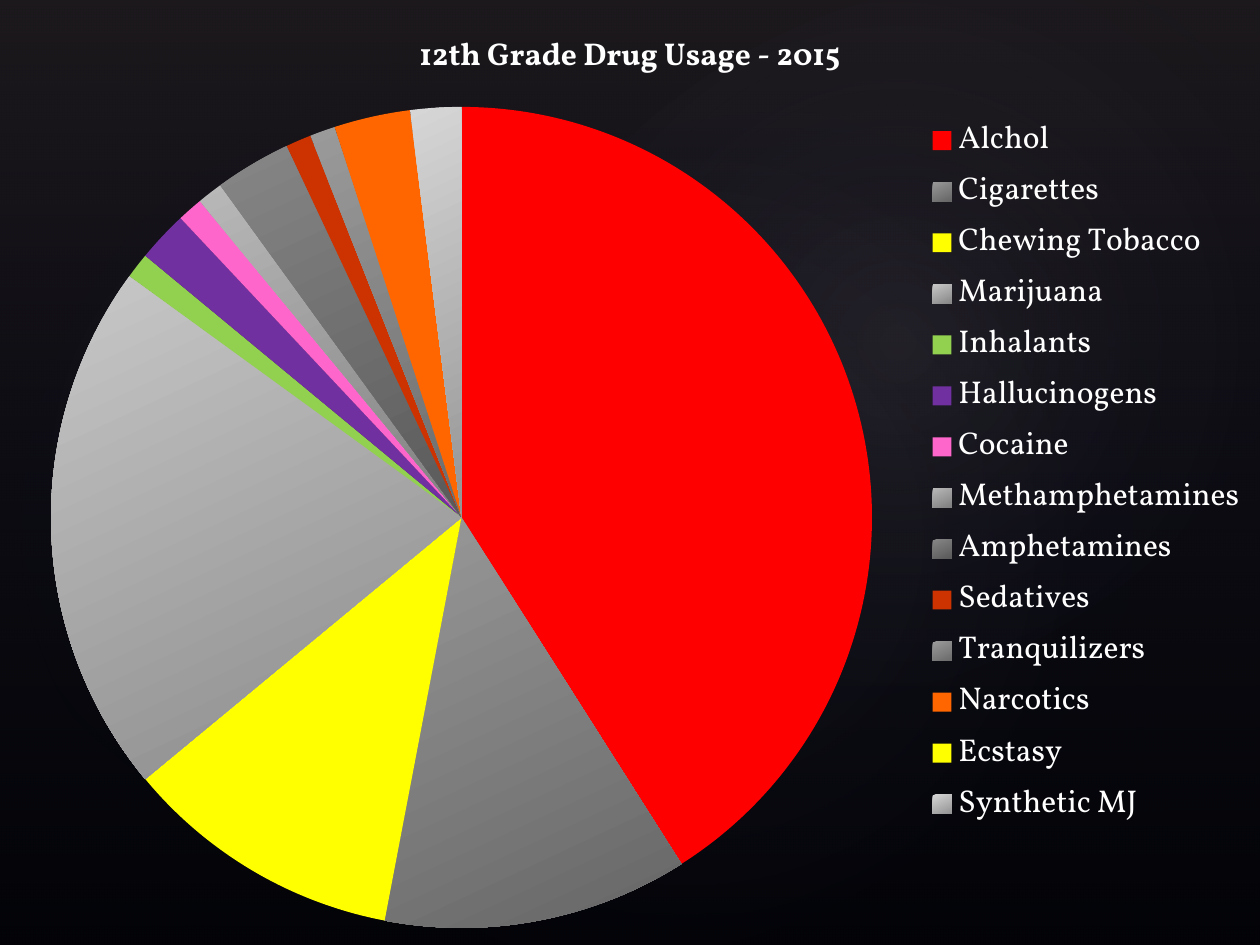
from lxml import etree
from pptx import Presentation
from pptx.chart.data import CategoryChartData
from pptx.dml.color import RGBColor
from pptx.enum import chart as charts, shapes
from pptx.oxml import parse_xml
from pptx.oxml.ns import nsdecls, qn
from pptx.util import Emu, Pt

PX = 914400 // 126
WIDTH, HEIGHT = 1260, 945
FONT = "Vollkorn"
WHITE, BLACK = RGBColor(255, 255, 255), RGBColor(0, 0, 0)
RED = RGBColor(0xFF, 0x00, 0x00)
YELLOW = RGBColor(0xFF, 0xFF, 0x00)
GREEN = RGBColor(0x92, 0xD0, 0x50)
PURPLE = RGBColor(0x70, 0x30, 0xA0)
PINK = RGBColor(0xFF, 0x66, 0xCC)
RUST = RGBColor(0xCC, 0x33, 0x00)
ORANGE = RGBColor(0xFF, 0x66, 0x00)
MAUVE = RGBColor(0x50, 0x46, 0x52)
LILAC = RGBColor(0xC4, 0xBC, 0xC6)
NAVY = RGBColor(0x24, 0x28, 0x52)

TITLE = "12th Grade Drug Usage - 2015"
# Category, share in percent, colour or (light, dark) grey levels
SLICES = [
    ("Alchol", 41, RED),
    ("Cigarettes", 12, (0x98, 0x66)),
    ("Chewing Tobacco", 11, YELLOW),
    ("Marijuana", 21, (0xC8, 0x88)),
    ("Inhalants", 1, GREEN),
    ("Hallucinogens", 2, PURPLE),
    ("Cocaine", 1, PINK),
    ("Methamphetamines", 1, (0xB8, 0x80)),
    ("Amphetamines", 3, (0x86, 0x5A)),
    ("Sedatives", 1, RUST),
    ("Tranquilizers", 1, (0x9A, 0x6C)),
    ("Narcotics", 3, ORANGE),
    ("Ecstasy", 0, YELLOW),
    ("Synthetic MJ", 2, (0xD6, 0x94)),
]
# Left, top, width, height, rotation, opacity of the centre in percent
GLOWS = [
    (189, 144, 998, 786, 328.7, 7),
    (-38, 161, 764, 617, 294.3, 8),
    (451, 16, 893, 655, 328.7, 8),
]
PIE_BOX = (51, 107, 821, 821)
LEGEND_BOX = (927, 112, 318, 721)
LINEAR = '<a:lin ang="5400000" scaled="0"/>'
RADIAL = ('<a:path path="circle"><a:fillToRect l="50000" t="50000" '
          'r="50000" b="50000"/></a:path>')


def add_glow(slide, kind, box, stops, direction, rotation=0):
    """Add a borderless shape with a translucent gradient."""
    shape = slide.shapes.add_shape(kind, *(Emu(v * PX) for v in box))
    shape.rotation = rotation
    shape.shadow.inherit = False
    shape.line.fill.background()
    marks = "".join(
        f'<a:gs pos="{position * 1000}"><a:srgbClr val="{color}">'
        f'<a:alpha val="{opacity * 1000}"/></a:srgbClr></a:gs>'
        for position, color, opacity in stops)
    gradient = parse_xml(f'<a:gradFill {nsdecls("a")} rotWithShape="1">'
                         f'<a:gsLst>{marks}</a:gsLst>{direction}</a:gradFill>')
    shape._element.spPr.find(qn("a:prstGeom")).addnext(gradient)


def place(element, box, inner=False):
    """Give a chart part a fixed place, as fractions of the slide."""
    for old in element.findall(qn("c:layout")):
        element.remove(old)
    layout = etree.Element(qn("c:layout"))
    manual = etree.SubElement(layout, qn("c:manualLayout"))
    settings = [("layoutTarget", "inner")] if inner else []
    settings += [("xMode", "edge"), ("yMode", "edge")]
    sizes = (WIDTH, HEIGHT, WIDTH, HEIGHT)
    settings += [(name, f"{value / size:.4f}")
                 for name, value, size in zip("xywh", box, sizes)]
    for name, value in settings:
        etree.SubElement(manual, qn(f"c:{name}")).set("val", value)
    position = element.find(qn("c:legendPos"))
    if position is None:
        element.insert(0, layout)
    else:
        position.addnext(layout)


def paint(fill, color):
    if isinstance(color, RGBColor):
        fill.solid()
        fill.fore_color.rgb = color
        return
    fill.gradient()
    fill.gradient_angle = 295
    for stop, level in zip(fill.gradient_stops, color):
        stop.color.rgb = RGBColor(level, level, level)


def add_pie(slide):
    data = CategoryChartData()
    data.categories = [name for name, _, _ in SLICES]
    data.add_series(TITLE, [share for _, share, _ in SLICES])
    chart = slide.shapes.add_chart(
        charts.XL_CHART_TYPE.PIE, 0, 0,
        Emu(WIDTH * PX), Emu(HEIGHT * PX), data).chart
    chart.font.name = FONT
    chart.font.size = Pt(10)
    chart.font.color.rgb = WHITE

    chart.has_title = True
    chart.chart_title.include_in_layout = False
    chart.chart_title.text_frame.text = TITLE
    font = chart.chart_title.text_frame.paragraphs[0].font
    font.name, font.size, font.bold = FONT, Pt(18), True
    font.color.rgb = WHITE

    chart.has_legend = True
    legend = chart.legend
    legend.position = charts.XL_LEGEND_POSITION.RIGHT
    legend.include_in_layout = False
    legend.font.name, legend.font.size = FONT, Pt(18)
    legend.font.color.rgb = WHITE
    place(legend._element, LEGEND_BOX)

    plot = chart.plots[0]
    plot.vary_by_categories = True
    place(plot._element.getparent(), PIE_BOX, inner=True)
    for index, (_, _, color) in enumerate(SLICES):
        point_format = plot.series[0].points[index].format
        paint(point_format.fill, color)
        point_format.line.fill.background()


def main():
    presentation = Presentation()
    presentation.slide_width = Emu(WIDTH * PX)
    presentation.slide_height = Emu(HEIGHT * PX)
    slide = presentation.slides.add_slide(presentation.slide_layouts[6])
    slide.background.fill.solid()
    slide.background.fill.fore_color.rgb = BLACK

    kinds = shapes.MSO_SHAPE
    add_glow(slide, kinds.RECTANGLE, (0, 0, WIDTH, HEIGHT),
             [(0, MAUVE, 36), (100, NAVY, 10)], LINEAR)
    for *box, rotation, opacity in GLOWS:
        add_glow(slide, kinds.OVAL, box,
                 [(0, LILAC, opacity), (58, NAVY, 0)], RADIAL, rotation)
    add_pie(slide)
    presentation.save("out.pptx")


if __name__ == "__main__":
    main()
